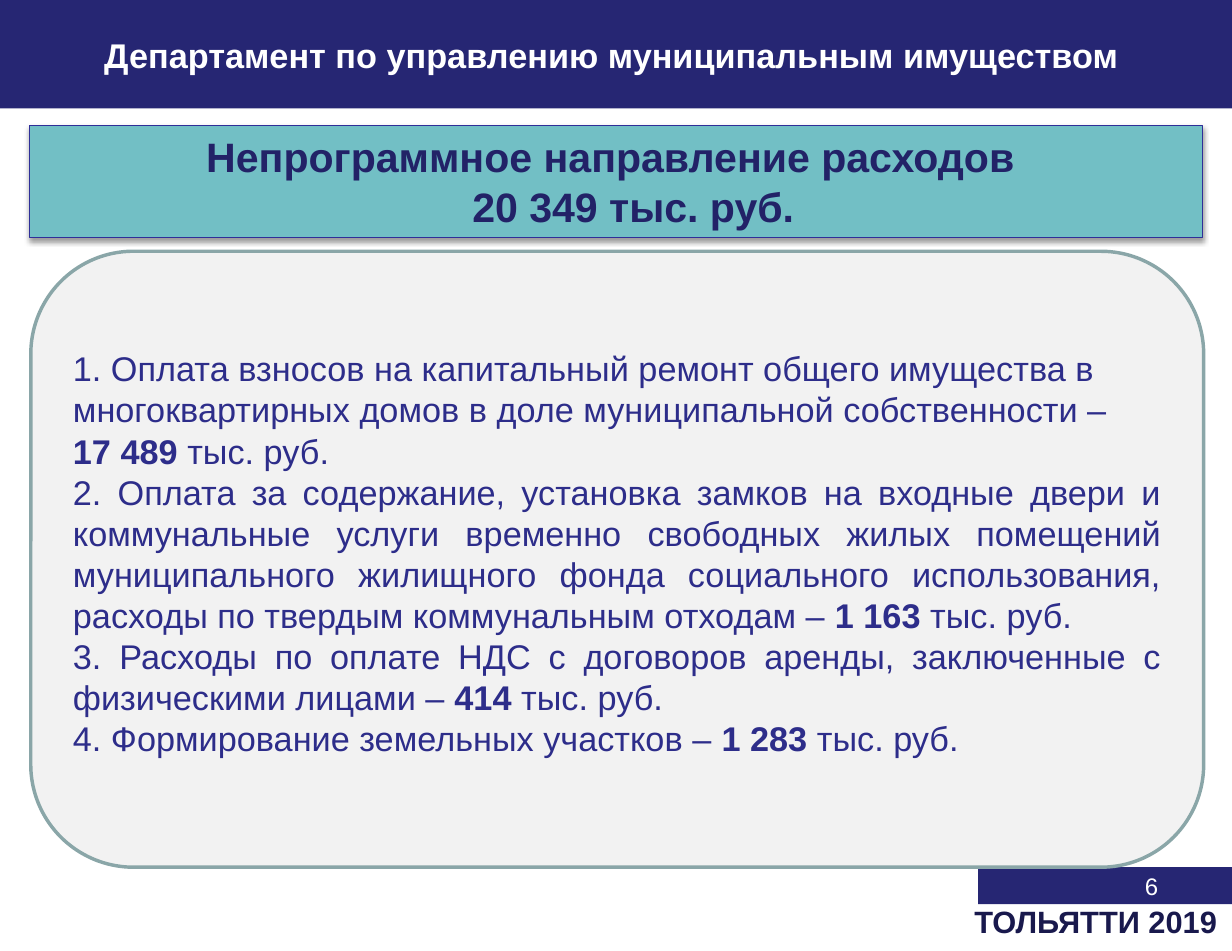
from dataclasses import dataclass

from pptx import Presentation
from pptx.dml.color import RGBColor
from pptx.enum.shapes import MSO_SHAPE as Shape
from pptx.enum.text import MSO_ANCHOR as Anchor, PP_ALIGN as Align
from pptx.oxml import parse_xml
from pptx.oxml.ns import nsdecls
from pptx.util import Inches, Pt

COLUMNS, ROWS = 100, 77.2
CELL = Inches(0.1)


@dataclass(frozen=True)
class Theme:
    font: str = "Arial"
    navy: str = "262673"
    white: str = "FFFFFF"
    teal: str = "72BFC5"
    teal_line: str = "2F2F98"
    panel: str = "F2F2F2"
    panel_line: str = "8AA6A8"
    banner_text: str = "222267"
    body_text: str = "2D2D8A"
    city_text: str = "19194D"
    number_size: int = 14
    city_size: int = 18
    body_size: int = 20
    banner_size: int = 24


@dataclass(frozen=True)
class Box:
    left: float
    top: float
    width: float
    height: float

    def inner(self, left, top, width, height):
        return Box(self.left + left, self.top + top, width, height)

    def lengths(self):
        return [round(cells * CELL) for cells in
                (self.left, self.top, self.width, self.height)]


THEME = Theme()


def add_panel(page, box, fill, line=None, weight=1, kind=Shape.RECTANGLE):
    panel = page.shapes.add_shape(kind, *box.lengths())
    panel.shadow.inherit = False
    panel.fill.solid()
    panel.fill.fore_color.rgb = RGBColor.from_string(fill)
    if line:
        panel.line.color.rgb = RGBColor.from_string(line)
        panel.line.width = Pt(weight)
    else:
        panel.line.fill.background()
    return panel


def add_shadow(panel):
    effects = panel._element.spPr.find(
        "{http://schemas.openxmlformats.org/drawingml/2006/main}effectLst")
    effects.append(parse_xml(
        f'<a:outerShdw {nsdecls("a")} blurRad="{Pt(3.1)}" dist="{Pt(1.6)}" '
        'dir="5400000" algn="ctr" rotWithShape="0"><a:srgbClr val="000000">'
        '<a:alpha val="38000"/></a:srgbClr></a:outerShdw>'))


def add_text(para, text, *, size, color, bold=False):
    for index, line in enumerate(text.split("\n")):
        if index:
            para.add_line_break()
        if line:
            span = para.add_run()
            span.text = line
            span.font.name = THEME.font
            span.font.size = Pt(size)
            span.font.bold = bold
            span.font.color.rgb = RGBColor.from_string(color)


def next_para(frame, index):
    return frame.add_paragraph() if index else frame.paragraphs[0]


def add_label(page, box, text, align, spacing=1.0, **look):
    frame = page.shapes.add_textbox(*box.lengths()).text_frame
    frame.word_wrap = True
    para = frame.paragraphs[0]
    para.alignment = align
    para.line_spacing = spacing
    add_text(para, text, **look)


def draw_footer(page, box, number, city):
    add_panel(page, box.inner(7.7, 0.1, 20.6, 3), THEME.navy)
    add_label(page, box.inner(0, 0, 23.3, 5.4), number, Align.RIGHT,
              size=THEME.number_size, color=THEME.white)
    add_label(page, box.inner(6.4, 3.1, 22.1, 3.5), city, Align.LEFT, 0.8,
              size=THEME.city_size, color=THEME.city_text, bold=True)


def draw_header(page, box, title):
    frame = add_panel(page, box, THEME.navy).text_frame
    frame.word_wrap = True
    frame.vertical_anchor = Anchor.MIDDLE
    frame.margin_top, frame.margin_right = Inches(0.12), Inches(0.17)
    para = frame.paragraphs[0]
    para.alignment = Align.CENTER
    para.line_spacing = 0.8
    add_text(para, title, size=THEME.body_size, color=THEME.white, bold=True)


def draw_banner(page, box, lines):
    panel = add_panel(page, box, THEME.teal, THEME.teal_line, 0.75)
    add_shadow(panel)
    frame = panel.text_frame
    frame.word_wrap = True
    frame.vertical_anchor = Anchor.TOP
    for index, (line, indent) in enumerate(lines):
        para = next_para(frame, index)
        para.alignment = Align.CENTER
        para._p.get_or_add_pPr().set("marL", str(Inches(indent)))
        add_text(para, line, size=THEME.banner_size, color=THEME.banner_text, bold=True)


def draw_expenses(page, box, expenses):
    frame = add_panel(page, box, THEME.panel, THEME.panel_line, 2,
                      Shape.ROUNDED_RECTANGLE).text_frame
    frame.word_wrap = True
    frame.vertical_anchor = Anchor.MIDDLE
    frame.margin_bottom = Inches(0.15)
    look = {"size": THEME.body_size, "color": THEME.body_text}
    for index, (purpose, amount, align) in enumerate(expenses):
        para = next_para(frame, index)
        para.alignment = align
        add_text(para, purpose, **look)
        add_text(para, amount, bold=True, **look)
        add_text(para, " тыс. руб.", **look)


def main():
    deck = Presentation()
    deck.slide_width, deck.slide_height = round(COLUMNS * CELL), round(ROWS * CELL)
    page = deck.slides.add_slide(deck.slide_layouts[6])
    draw_footer(page, Box(71.7, 70.3, 28.5, 6.9), "6", "ТОЛЬЯТТИ 2019")
    draw_header(page, Box(0, 0, COLUMNS, 8.8),
                "Департамент по управлению муниципальным имуществом")
    draw_banner(page, Box(2.4, 10.2, 95.2, 9.1), [
        ("Непрограммное направление расходов ", 0),
        ("20 349 тыс. руб.", 0.28),
    ])
    draw_expenses(page, Box(2.5, 20.4, 95.2, 50), [
        ("1. Оплата взносов на капитальный ремонт общего имущества в "
         "многоквартирных домов в доле муниципальной собственности –\n",
         "17 489", Align.LEFT),
        ("2. Оплата за содержание, установка замков на входные двери и "
         "коммунальные услуги временно свободных жилых помещений "
         "муниципального жилищного фонда социального использования, "
         "расходы по твердым коммунальным отходам – ", "1 163", Align.JUSTIFY),
        ("3. Расходы по оплате НДС с договоров аренды, заключенные с "
         "физическими лицами – ", "414", Align.JUSTIFY),
        ("4. Формирование земельных участков – ", "1 283", Align.JUSTIFY),
    ])
    deck.save("out.pptx")


if __name__ == "__main__":
    main()
